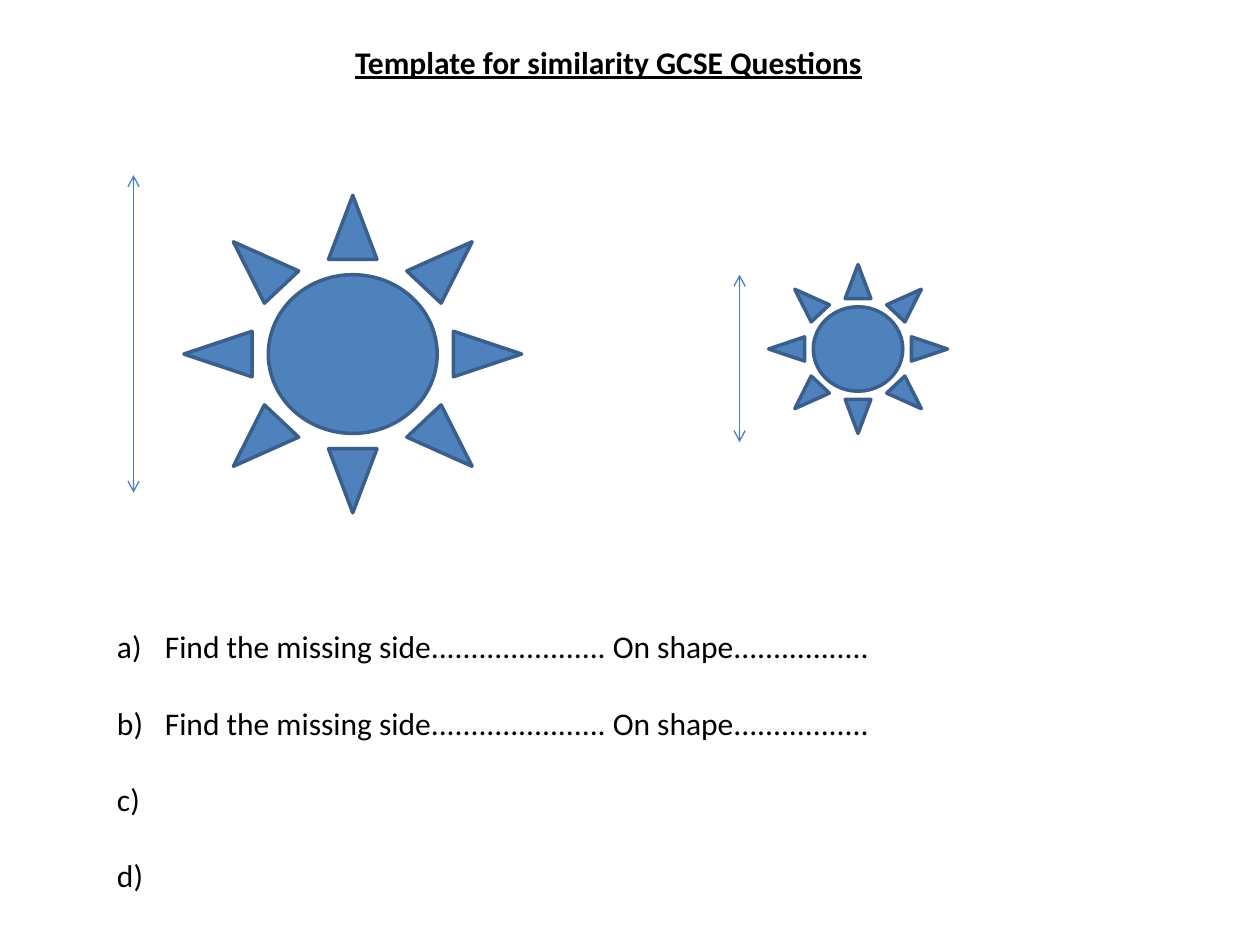
import pptx
import pptx.util
import pptx.dml.color
import pptx.enum.shapes
import pptx.enum.text
import pptx.oxml
import pptx.oxml.ns
import lxml.etree

Inches, Pt = pptx.util.Inches, pptx.util.Pt
qn = pptx.oxml.ns.qn

TITLE = "Template for similarity GCSE Questions"
FIND = "Find the missing side...................... On shape................."
TASKS = [FIND, FIND, " ", " "]
SUNS = [(1.46, 1.55, 2.68, 2.52), (6.1, 2.1, 1.42, 1.34)]
SPANS = [(1.06, 1.39, 3.91), (5.87, 2.18, 3.51)]  # x, top, bottom


def color(text):
    return pptx.dml.color.RGBColor.from_string(text)


def add_text(slide, box, lines, wrap, bold=False):
    frame = slide.shapes.add_textbox(*map(Inches, box)).text_frame
    frame.word_wrap = wrap
    frame.auto_size = pptx.enum.text.MSO_AUTO_SIZE.SHAPE_TO_FIT_TEXT
    frame.text = "\n".join(lines)
    for para in frame.paragraphs:
        for run in para.runs:
            font = run.font
            font.name, font.size = "Calibri", Pt(18)
            font.bold = font.underline = bold
            font.color.rgb = color("000000")
    return frame


def letter(para):
    """Number a paragraph a), b), c) with a hanging indent."""
    props = para._p.get_or_add_pPr()
    props.set("marL", str(Inches(0.38)))
    props.set("indent", str(-Inches(0.38)))
    mark = lxml.etree.SubElement(props, qn("a:buAutoNum"))
    mark.set("type", "alphaLcParenR")


def add_sun(slide, box):
    kind = pptx.enum.shapes.MSO_SHAPE.SUN
    sun = slide.shapes.add_shape(kind, *map(Inches, box))
    sun.shadow.inherit = False
    sun.fill.solid()
    sun.fill.fore_color.rgb = color("4F81BD")
    sun.line.color.rgb = color("3A5F8C")
    sun.line.width = Pt(2)


def add_span(slide, x, top, bottom):
    """Draw a vertical dimension line with an arrow at each end."""
    kind = pptx.enum.shapes.MSO_CONNECTOR.STRAIGHT
    span = slide.shapes.add_connector(kind, *map(Inches, (x, top, x, bottom)))
    span.line.color.rgb = color("4B7EBC")
    span.line.width = Pt(0.75)
    props = span._element.spPr
    for end in ("a:headEnd", "a:tailEnd"):
        lxml.etree.SubElement(props.find(qn("a:ln")), qn(end)).set("type", "arrow")
    lxml.etree.SubElement(props, qn("a:effectLst"))


def main():
    deck = pptx.Presentation()
    deck.slide_width, deck.slide_height = Inches(10), Inches(7.5)
    slide = deck.slides.add_slide(deck.slide_layouts[6])

    add_text(slide, (2.72, 0.29, 4.81, 0.4), [TITLE], True, bold=True)
    tasks = add_text(slide, (0.83, 4.93, 6.21, 2.83), TASKS, False)
    for para in tasks.paragraphs:
        para.space_after = Pt(22)
        letter(para)
    for box in SUNS:
        add_sun(slide, box)
    for span in SPANS:
        add_span(slide, *span)

    deck.save("out.pptx")


if __name__ == "__main__":
    main()
